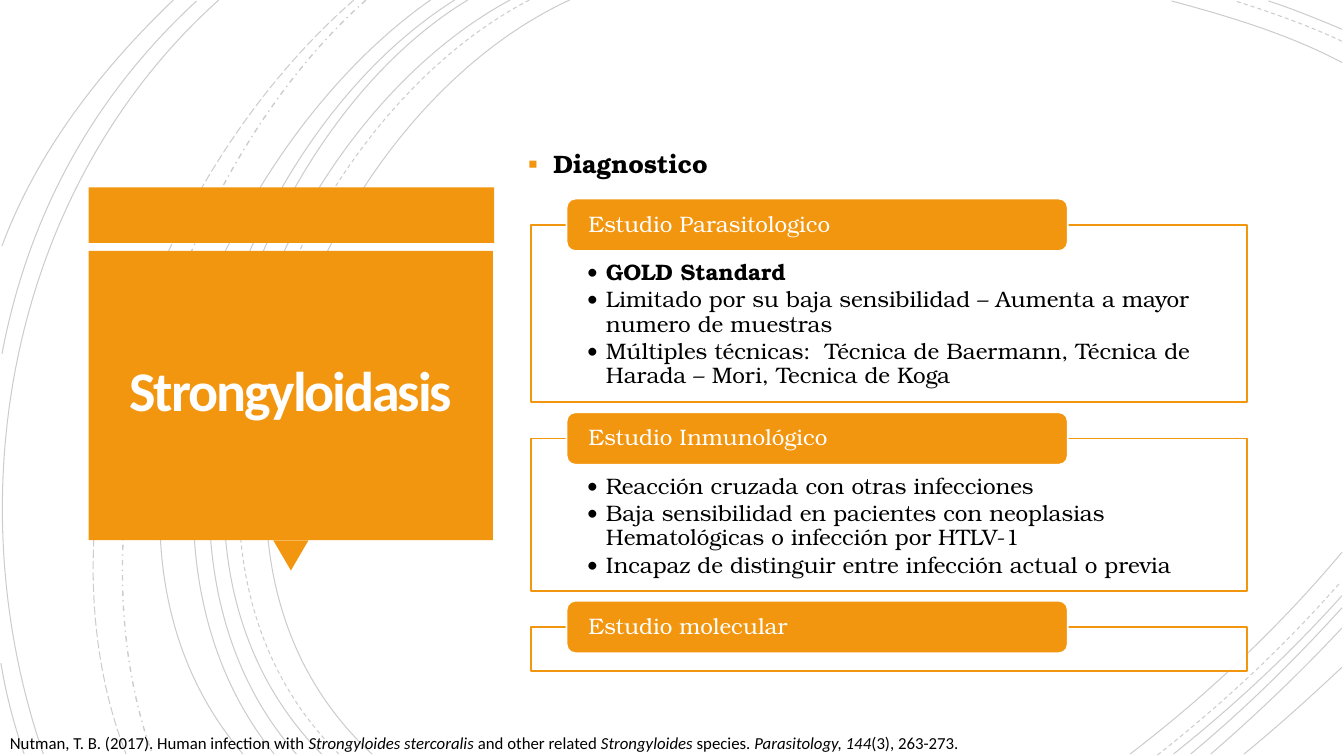
import lxml.etree
import pptx
import pptx.dml.color
import pptx.enum.dml
import pptx.enum.shapes
import pptx.enum.text
import pptx.oxml.ns
import pptx.util
from dataclasses import dataclass

Inches = pptx.util.Inches
Pt = pptx.util.Pt
Shape = pptx.enum.shapes.MSO_SHAPE
Dash = pptx.enum.dml.MSO_LINE
Align = pptx.enum.text.PP_ALIGN
MIDDLE = pptx.enum.text.MSO_ANCHOR.MIDDLE
TOP = pptx.enum.text.MSO_ANCHOR.TOP
qn = pptx.oxml.ns.qn


@dataclass(frozen=True)
class Theme:
    orange: str = "F3960F"
    white: str = "FFFFFF"
    pale: str = "FFFEFF"
    black: str = "000000"
    sans: str = "Calibri"
    serif: str = "TeX Gyre Bonum"
    title: int = 40
    lead: int = 18
    body: int = 16
    note: int = 12


# Start point, two control points and end point of each arc, in inches
ARCS = {
    (Dash.SOLID, 0.75): [
        (5.65, 0, 3.15, 1.15, 1.43, 5.4, 3.69, 7.48),
        (13.31, 0.62, 12.78, 0.34, 12.18, 0.16, 11.62, 0.01),
        (11.21, 7.48, 11.97, 6.9, 12.69, 6.22, 13.31, 5.48),
        (5.06, 0, 2.7, 1.27, 1.1, 5.37, 3.19, 7.48),
        (13.31, 0.29, 13.07, 0.19, 12.83, 0.09, 12.58, 0.01),
        (11.64, 7.48, 12.23, 7.01, 12.8, 6.48, 13.31, 5.91),
        (4.64, 0, 2.44, 1.33, 1.1, 5.41, 2.94, 7.48),
        (11.81, 7.48, 12.34, 7.04, 12.84, 6.55, 13.31, 6.03),
        (4.51, 0, 2.31, 1.38, 0.97, 5.33, 2.72, 7.48),
        (12.01, 7.48, 12.46, 7.09, 12.9, 6.67, 13.31, 6.23),
        (4.27, 0, 2.17, 1.47, 0.53, 5.29, 2.41, 7.48),
        (12.34, 7.48, 12.67, 7.21, 12.99, 6.92, 13.31, 6.62),
        (2.17, 0, 0.11, 1.85, -0.46, 4.9, 0.43, 7.48),
        (1.95, 0.01, 0.92, 0.96, 0.28, 2.14, 0.02, 3.51),
        (0.01, 6.58, 0.06, 6.89, 0.14, 7.19, 0.24, 7.48),
        (1.72, 0, 1, 0.69, 0.37, 1.5, 0.02, 2.44),
    ],
    (Dash.DASH, 0.75): [
        (5.25, 0, 2.85, 1.25, 1.23, 5.37, 3.36, 7.48),
        (13.31, 0.41, 12.97, 0.25, 12.6, 0.12, 12.25, 0.01),
        (11.48, 7.49, 12.13, 6.98, 12.75, 6.4, 13.3, 5.77),
    ],
    (Dash.DASH_DOT, 1): [(3.63, 0, 1.76, 1.66, 0.65, 5.09, 1.51, 7.48)],
    (Dash.LONG_DASH, 0.75): [(3.51, 0, 1.57, 1.69, 0.29, 4.99, 1.25, 7.48)],
}

# Heading, height of the card and its points
CARDS = [
    ("Estudio Parasitologico", 1.76, [
        "GOLD Standard",
        "Limitado por su baja sensibilidad – Aumenta a mayor numero de muestras",
        "Múltiples técnicas:  Técnica de Baermann, Técnica de Harada – Mori, Tecnica de Koga"]),
    ("Estudio Inmunológico", 1.51, [
        "Reacción cruzada con otras infecciones",
        "Baja sensibilidad en pacientes con neoplasias Hematológicas o infección por HTLV-1",
        "Incapaz de distinguir entre infección actual o previa"]),
    ("Estudio molecular", 0.44, []),
]

# Citation runs; every second one is italic
NOTE = ["Nutman, T. B. (2017). Human infection with ", "Strongyloides stercoralis",
        " and other related ", "Strongyloides", " species. ",
        "Parasitology, 144", "(3), 263-273."]


def color(code):
    return pptx.dml.color.RGBColor.from_string(code)


def put(item, **values):
    for name, value in values.items():
        setattr(item, name, value)


def fade(shape, place, percent):
    """Set the opacity of the colour found at place inside the shape."""
    for node in shape._element.xpath(f"./p:spPr/{place}a:solidFill/a:srgbClr"):
        lxml.etree.SubElement(node, qn("a:alpha"), val=str(percent * 1000))


class Page:
    def __init__(self, slide, theme):
        self.shapes = slide.shapes
        self.theme = theme

    def arc(self, curve, dash, width):
        """Draw an open cubic curve: the three drawn legs become one bend."""
        points = [tuple(map(Inches, pair)) for pair in zip(curve[::2], curve[1::2])]
        pen = self.shapes.build_freeform(*points[0], scale=1.0)
        pen.add_line_segments(points[1:], close=False)
        shape = pen.convert_to_shape()
        legs = shape._element.xpath(".//a:lnTo")
        bend = lxml.etree.SubElement(legs[0].getparent(), qn("a:cubicBezTo"))
        for leg in legs:
            bend.append(leg[0])
            leg.getparent().remove(leg)
        shape.shadow.inherit = False
        shape.fill.background()
        shape.line.color.rgb = color(self.theme.black)
        put(shape.line, width=Pt(width), dash_style=dash)
        fade(shape, "a:ln/", 20)

    def block(self, kind, box, fill, line=None):
        shape = self.shapes.add_shape(kind, *map(Inches, box))
        shape.shadow.inherit = False
        shape.fill.solid()
        shape.fill.fore_color.rgb = color(fill)
        if line:
            shape.line.color.rgb = color(line)
            shape.line.width = Pt(1.25)
        else:
            shape.line.fill.background()
        return shape

    def text(self, box):
        return self.shapes.add_textbox(*map(Inches, box))

    def frame(self, shape, insets, anchor=MIDDLE):
        sides = ("margin_left", "margin_top", "margin_right", "margin_bottom")
        put(shape.text_frame, word_wrap=True, vertical_anchor=anchor,
            **dict(zip(sides, map(Inches, insets))))
        return shape.text_frame

    def line(self, para, runs, ink, bullet=None, indent=0, layout=None, **font):
        """Fill a paragraph with runs; bullet is (sign, colour, size percent)."""
        if bullet:
            sign, tint, size = bullet
            props = para._p.get_or_add_pPr()
            props.set("marL", str(Inches(indent)))
            props.set("indent", str(-Inches(indent)))
            tone = lxml.etree.SubElement(props, qn("a:buClr"))
            lxml.etree.SubElement(tone, qn("a:srgbClr"), val=tint)
            lxml.etree.SubElement(props, qn("a:buSzPct"), val=str(size * 1000))
            lxml.etree.SubElement(props, qn("a:buFont"), typeface=self.theme.sans)
            lxml.etree.SubElement(props, qn("a:buChar"), char=sign)
        put(para, **{"alignment": Align.LEFT, **(layout or {})})
        for order, words in enumerate(runs):
            run = para.add_run()
            run.text = words
            put(run.font, italic=order % 2 == 1, **font)
            run.font.color.rgb = color(ink)

    def card(self, top, height, heading, points):
        theme = self.theme
        body = dict(name=theme.serif, size=Pt(theme.body))
        panel = self.block(Shape.RECTANGLE, (5.27, top, 7.1, height), theme.white, theme.orange)
        fade(panel, "", 90)
        if points:
            frame = self.frame(panel, (0.55, 0.36, 0.55, 0.12), TOP)
            for order, point in enumerate(points):
                para = frame.add_paragraph() if order else frame.paragraphs[0]
                self.line(para, [point], theme.black, ("•", theme.black, 100), 0.19,
                          dict(level=1, line_spacing=0.9, space_after=Pt(2.4)),
                          bold=point.startswith("GOLD"), **body)
        tab = self.block(Shape.ROUNDED_RECTANGLE, (5.62, top - 0.26, 4.97, 0.52),
                         theme.orange, theme.white)
        frame = self.frame(tab, (0.19, 0, 0.19, 0))
        self.line(frame.paragraphs[0], [heading], theme.white,
                  layout=dict(line_spacing=0.9), **body)


def main():
    deck = pptx.Presentation()
    put(deck, slide_width=Inches(13.33), slide_height=Inches(7.5))
    theme = Theme()
    page = Page(deck.slides.add_slide(deck.slide_layouts[6]), theme)

    for (dash, width), curves in ARCS.items():
        for curve in curves:
            page.arc(curve, dash, width)

    page.block(Shape.RECTANGLE, (0.88, 1.86, 4.02, 0.55), theme.orange)
    page.block(Shape.ISOSCELES_TRIANGLE, (2.71, 5.36, 0.35, 0.3), theme.orange).rotation = 180
    page.block(Shape.RECTANGLE, (0.88, 2.49, 4.01, 2.87), theme.orange)

    title = page.frame(page.text((0.97, 2.57, 3.83, 2.69)), [0.25] * 4).paragraphs[0]
    page.line(title, ["Strongyloidasis"], theme.pale,
              layout=dict(alignment=Align.CENTER, line_spacing=0.85),
              name=theme.sans, size=Pt(theme.title), bold=True)
    title.runs[0]._r.get_or_add_rPr().set("spc", "-150")

    note = page.frame(page.text((0, 7.22, 12.7, 0.3)), (0.1, 0.05, 0.1, 0.05), TOP)
    page.line(note.paragraphs[0], NOTE, theme.black, name=theme.sans, size=Pt(theme.note))

    lead = page.frame(page.text((5.14, 1.21, 6.89, 0.77)), (0.1, 0.05, 0.1, 0.05))
    page.line(lead.paragraphs[0], ["Diagnostico"], theme.black, ("▪", theme.orange, 110), 0.25,
              dict(line_spacing=1.2), name=theme.serif, size=Pt(theme.lead), bold=True)

    top = 2.23
    for heading, height, points in CARDS:
        page.card(top, height, heading, points)
        top += height + 0.36

    deck.save("out.pptx")


if __name__ == "__main__":
    main()
